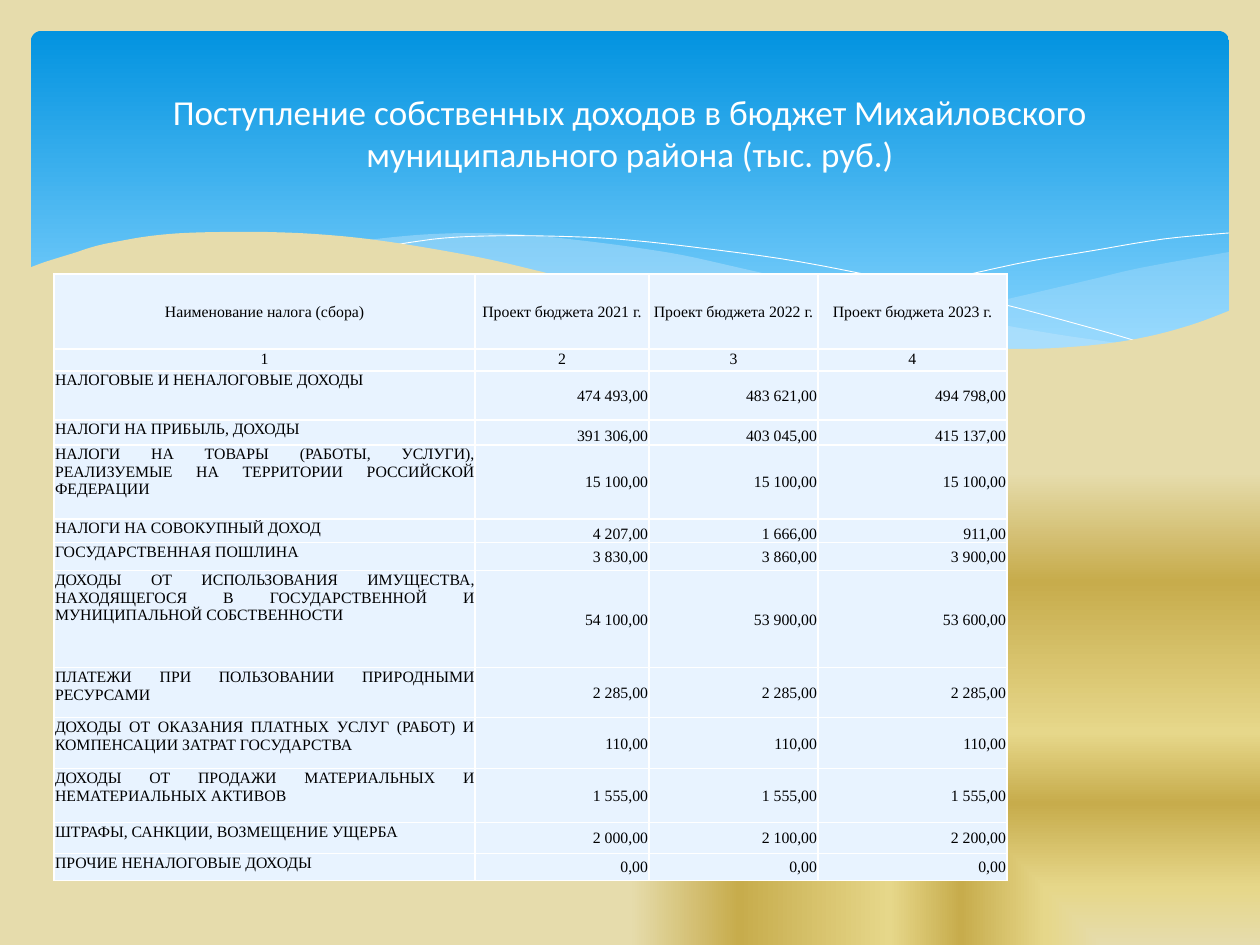
"""Build a slide with a table of a district's own budget revenues."""
import pptx
import pptx.util
import pptx.dml.color
import pptx.enum.shapes
import pptx.enum.text
import pptx.oxml
import pptx.oxml.ns

TITLE = "Поступление собственных доходов в бюджет Михайловского муниципального района (тыс. руб.)"
ROWS = [
    (75, "Наименование налога (сбора)", "Проект бюджета 2021 г.", "Проект бюджета 2022 г.", "Проект бюджета 2023 г."),
    (22, "1", "2", "3", "4"),
    (49, "НАЛОГОВЫЕ И НЕНАЛОГОВЫЕ ДОХОДЫ", "474 493,00", "483 621,00", "494 798,00"),
    (25, "НАЛОГИ НА ПРИБЫЛЬ, ДОХОДЫ", "391 306,00", "403 045,00", "415 137,00"),
    (74, "НАЛОГИ НА ТОВАРЫ (РАБОТЫ, УСЛУГИ), РЕАЛИЗУЕМЫЕ НА ТЕРРИТОРИИ РОССИЙСКОЙ ФЕДЕРАЦИИ",
     "15 100,00", "15 100,00", "15 100,00"),
    (24, "НАЛОГИ НА СОВОКУПНЫЙ ДОХОД", "4 207,00", "1 666,00", "911,00"),
    (28, "ГОСУДАРСТВЕННАЯ ПОШЛИНА", "3 830,00", "3 860,00", "3 900,00"),
    (97, "ДОХОДЫ ОТ ИСПОЛЬЗОВАНИЯ ИМУЩЕСТВА, НАХОДЯЩЕГОСЯ В ГОСУДАРСТВЕННОЙ И МУНИЦИПАЛЬНОЙ СОБСТВЕННОСТИ",
     "54 100,00", "53 900,00", "53 600,00"),
    (50, "ПЛАТЕЖИ ПРИ ПОЛЬЗОВАНИИ ПРИРОДНЫМИ РЕСУРСАМИ", "2 285,00", "2 285,00", "2 285,00"),
    (51, "ДОХОДЫ ОТ ОКАЗАНИЯ ПЛАТНЫХ УСЛУГ (РАБОТ) И КОМПЕНСАЦИИ ЗАТРАТ ГОСУДАРСТВА",
     "110,00", "110,00", "110,00"),
    (54, "ДОХОДЫ ОТ ПРОДАЖИ МАТЕРИАЛЬНЫХ И НЕМАТЕРИАЛЬНЫХ АКТИВОВ", "1 555,00", "1 555,00", "1 555,00"),
    (31, "ШТРАФЫ, САНКЦИИ, ВОЗМЕЩЕНИЕ УЩЕРБА", "2 000,00", "2 100,00", "2 200,00"),
    (27, "ПРОЧИЕ НЕНАЛОГОВЫЕ ДОХОДЫ", "0,00", "0,00", "0,00"),
]
COLS = [421, 174, 169, 189]
LOW = (3, 5)
HEX = {"sand": "E6DCAC", "straw": "E6D78A", "gold": "C7AC4C", "deep": "0293E0", "sky": "83D3FE",
       "mist": "C6E7FC", "cell": "E8F3FF", "white": "FFFFFF", "black": "000000"}
GOLD = [(0, "sand"), (12, "straw"), (30, "gold"), (45, "straw"), (77, "gold"), (100, "sand")]
BLUE = [(0, "deep"), (90, "sky")]
CORNER = '<a:path path="rect"><a:fillToRect l="100000" t="100000"/></a:path>'
DOWN = '<a:lin ang="5400000" scaled="0"/>'
PANEL = (31, 31, 1198, 340)
HEAD = (63, 47, 1134, 172)
GRID = (54, 274)

RIGHT = [
    [(1229, 252), (1140, 268), (1085, 281), (981, 305), (889, 324), (833, 334)],
    [(833, 334), (922, 345), (998, 350), (1063, 349), (1121, 344), (1176, 333), (1229, 311)],
]
MIDDLE = [
    [(1125, 344), (1055, 334), (977, 320), (890, 302), (793, 280), (736, 267), (682, 255), (632, 247),
     (586, 241), (529, 235), (479, 233), (433, 234), (394, 237), (360, 241)],
    [(360, 241), (431, 251), (509, 266), (566, 280), (668, 302), (757, 321), (838, 335), (910, 345),
     (974, 349), (1031, 350), (1080, 349), (1125, 344)],
]
FALL = [[(389, 246), (413, 242), (445, 238), (487, 236), (545, 236), (616, 239), (701, 248), (801, 262),
         (916, 285), (1002, 304), (1095, 329), (1143, 343)]]
RISE = [[(772, 324), (823, 310), (907, 289), (1016, 264), (1091, 251), (1164, 239), (1229, 233)]]
FRONT = [
    [(1231, 310), (1197, 323), (1159, 334), (1118, 342), (1071, 347), (1019, 349), (959, 346), (892, 340),
     (816, 330), (730, 315), (634, 294), (563, 277), (492, 260), (428, 248), (368, 239), (315, 234),
     (266, 232), (223, 232), (184, 233), (150, 236), (120, 241), (96, 246), (74, 253), (45, 262), (29, 268)],
    [(29, 414), (1231, 414)],
]
WAVES = [(RIGHT, "mist", 29), (MIDDLE, "mist", 40), (FALL, None, 0), (RISE, None, 0), (FRONT, "sand", 100)]

Align = pptx.enum.text.PP_ALIGN
Anchor = pptx.enum.text.MSO_ANCHOR
NS = pptx.oxml.ns.nsdecls("a")


def px(n):
    return pptx.util.Emu(round(n * 914400 / 126))


def rgb(name):
    return pptx.dml.color.RGBColor.from_string(HEX[name])


def blend(fill, stops, way):
    fill.gradient()
    node = fill._fill._gradFill
    marks = "".join(f'<a:gs pos="{at * 1000}"><a:srgbClr val="{HEX[name]}"/></a:gs>' for at, name in stops)
    fresh = pptx.oxml.parse_xml(f'<a:gradFill {NS} rotWithShape="1"><a:gsLst>{marks}</a:gsLst>{way}</a:gradFill>')
    node.getparent().replace(node, fresh)


def smooth(knots, steps=5):
    ends = [knots[0], *knots, knots[-1]]
    dots = [knots[0]]
    for a, b, c, d in zip(ends, ends[1:], ends[2:], ends[3:]):
        for t in (i / steps for i in range(1, steps + 1)):
            dots.append(tuple(
                q + t * ((r - p) + t * ((2 * p - 5 * q + 4 * r - s) + t * (3 * q - p - 3 * r + s))) / 2
                for p, q, r, s in zip(a, b, c, d)))
    return dots


def wave(slide, parts, tint, alpha):
    dots = [(px(x), px(y)) for part in parts for x, y in smooth(part)]
    pen = slide.shapes.build_freeform(*dots[0])
    pen.add_line_segments(dots[1:], close=tint is not None)
    shape = pen.convert_to_shape()
    shape.shadow.inherit = False
    if tint is None:
        shape.fill.background()
        shape.line.color.rgb = rgb("white")
        shape.line.width = pptx.util.Pt(0.5)
        return
    shape.line.fill.background()
    shape.fill.solid()
    shape.fill.fore_color.rgb = rgb(tint)
    if alpha < 100:
        tone = shape._element.spPr.find(".//" + pptx.oxml.ns.qn("a:srgbClr"))
        tone.append(pptx.oxml.parse_xml(f'<a:alpha {NS} val="{alpha * 1000}"/>'))


def write(frame, text, align, size, font, tint):
    para = frame.paragraphs[0]
    para.alignment = align
    run = para.add_run()
    run.text = text
    run.font.size = pptx.util.Pt(size)
    run.font.name = font
    run.font.color.rgb = rgb(tint)


def style(row, col):
    if row < 2:
        return Align.CENTER, Anchor.TOP if row else Anchor.MIDDLE
    if col == 0:
        return Align.JUSTIFY, Anchor.TOP
    return Align.RIGHT, Anchor.BOTTOM if row in LOW else Anchor.MIDDLE


def edge(cell):
    props = cell._tc.get_or_add_tcPr()
    for i, side in enumerate(("lnL", "lnR", "lnT", "lnB")):
        props.insert(i, pptx.oxml.parse_xml(
            f'<a:{side} {NS} w="12700"><a:solidFill><a:srgbClr val="{HEX["white"]}"/></a:solidFill></a:{side}>'))


def fill_grid(slide):
    high = sum(row[0] for row in ROWS)
    table = slide.shapes.add_table(
        len(ROWS), len(COLS), *map(px, (*GRID, sum(COLS), high))).table
    table.first_row = table.horz_banding = False
    for col, wide in zip(table.columns, COLS):
        col.width = px(wide)
    for r, (tall, *texts) in enumerate(ROWS):
        table.rows[r].height = px(tall)
        for c, text in enumerate(texts):
            cell = table.cell(r, c)
            align, cell.vertical_anchor = style(r, c)
            cell.margin_left = cell.margin_right = cell.margin_top = px(1)
            cell.margin_bottom = 0
            cell.fill.solid()
            cell.fill.fore_color.rgb = rgb("cell")
            edge(cell)
            write(cell.text_frame, text, align, 9, "Times New Roman", "black")


def main():
    deck = pptx.Presentation()
    deck.slide_width, deck.slide_height = px(1260), px(945)
    slide = deck.slides.add_slide(deck.slide_layouts[5])
    blend(slide.background.fill, GOLD, CORNER)

    panel = slide.shapes.add_shape(pptx.enum.shapes.MSO_SHAPE.ROUNDED_RECTANGLE, *map(px, PANEL))
    panel.adjustments[0] = 0.03
    panel.shadow.inherit = False
    panel.line.fill.background()
    blend(panel.fill, BLUE, DOWN)
    for parts, tint, alpha in WAVES:
        wave(slide, parts, tint, alpha)
    fill_grid(slide)

    title = slide.shapes.title
    title.left, title.top, title.width, title.height = map(px, HEAD)
    title.text_frame.vertical_anchor = Anchor.MIDDLE
    write(title.text_frame, TITLE, Align.CENTER, 20, "Calibri", "white")
    title._element.getparent().append(title._element)
    deck.save("out.pptx")


if __name__ == "__main__":
    main()
